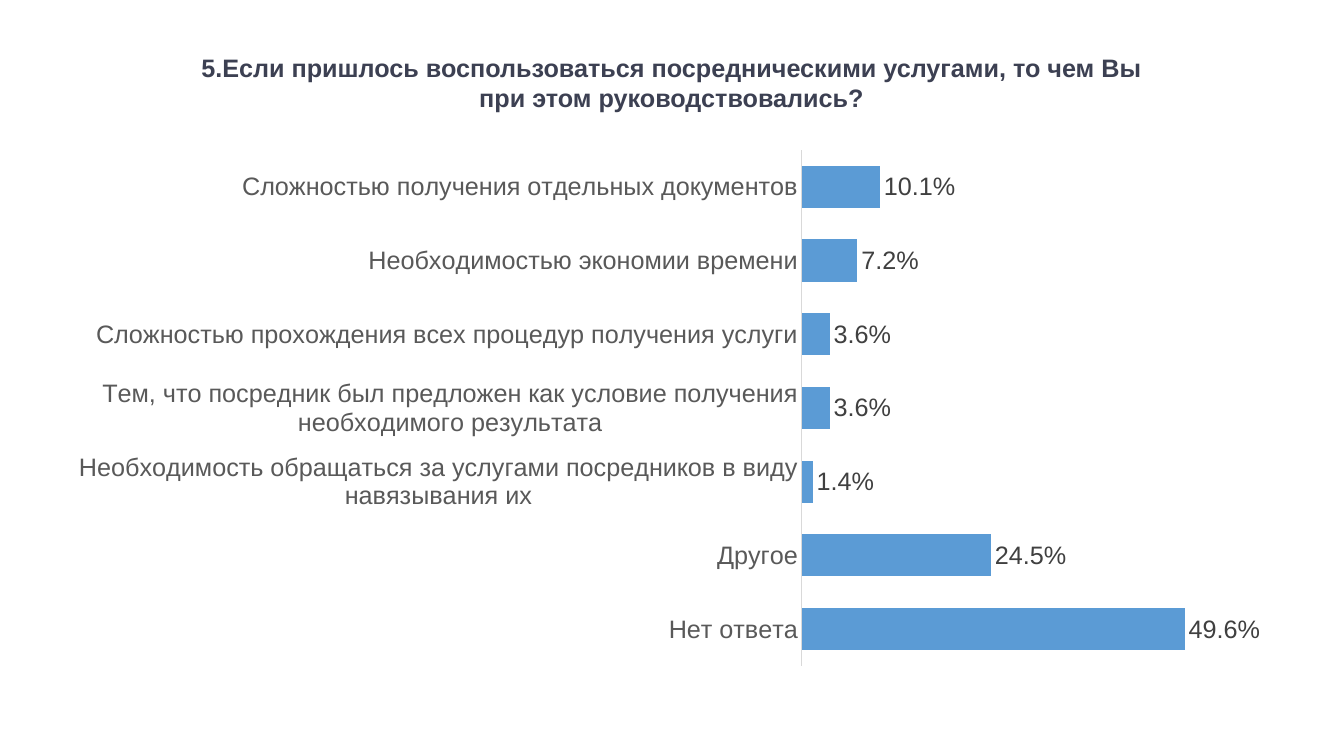
from lxml import etree
from pptx import Presentation
from pptx import util as u
from pptx.chart.data import CategoryChartData
from pptx.dml.color import RGBColor
from pptx.enum import chart as ch, text
from pptx.oxml.ns import qn

PX = 914400 / 100.8
COLORS = {"title": "3C4052", "bar": "5B9BD5", "category": "595959",
          "value": "404040", "axis": "D9D9D9"}


def px(*lengths):
    return [u.Emu(round(n * PX)) for n in lengths]


def style(font, color, bold=False):
    font.name, font.size, font.bold = "Arial", u.Pt(18), bold
    font.color.rgb = RGBColor.from_string(COLORS[color])


prs = Presentation()
prs.slide_width, prs.slide_height = px(1344, 756)
s = prs.slides.add_slide(prs.slide_layouts[6])

# Question
tf = s.shapes.add_textbox(*px(181, 47, 981, 72)).text_frame
tf.word_wrap = True
p = tf.paragraphs[0]
p.text = ("5.Если пришлось воспользоваться посредническими услугами, "
          "то чем Вы при этом руководствовались?")
p.alignment = text.PP_ALIGN.CENTER
style(p.font, "title", bold=True)

# Answers, from the bottom bar to the top one
answers = {
    "Нет ответа": 0.496,
    "Другое": 0.245,
    "Необходимость обращаться за услугами посредников в виду навязывания их": 0.014,
    "Тем, что посредник был предложен как условие получения необходимого результата": 0.036,
    "Сложностью прохождения всех процедур получения услуги": 0.036,
    "Необходимостью экономии времени": 0.072,
    "Сложностью получения отдельных документов": 0.101,
}
data = CategoryChartData(number_format="0.0%")
data.categories = list(answers)
data.add_series("Series 1", list(answers.values()))

# Bar chart
left, top, width, height = 54, 139, 1235, 537
chart = s.shapes.add_chart(ch.XL_CHART_TYPE.BAR_CLUSTERED,
                           *px(left, top, width, height), data).chart
chart.has_legend = chart.has_title = False
chart.font.name, chart.font.size = "Arial", u.Pt(18)
plot = chart.plots[0]
plot.gap_width, plot.vary_by_categories = 75, False
fill = plot.series[0].format.fill
fill.solid()
fill.fore_color.rgb = RGBColor.from_string(COLORS["bar"])

# Value labels
plot.has_data_labels = True
labels = plot.data_labels
labels.show_value = True
labels.number_format, labels.number_format_is_linked = "0.0%", False
labels.position = ch.XL_LABEL_POSITION.OUTSIDE_END
style(labels.font, "value")

# Axes
axis = chart.category_axis
axis.major_tick_mark = ch.XL_TICK_MARK.NONE
axis.format.line.color.rgb = RGBColor.from_string(COLORS["axis"])
axis.format.line.width = u.Pt(0.75)
style(axis.tick_labels.font, "category")
values = chart.value_axis
values.visible = values.has_major_gridlines = False
values.minimum_scale, values.maximum_scale = 0, 0.6

# Inner plot area as fractions of the chart
area = chart._chartSpace.find(".//" + qn("c:plotArea"))
for old in area.findall(qn("c:layout")):
    area.remove(old)
layout = etree.Element(qn("c:layout"))
area.insert(0, layout)
manual = etree.SubElement(layout, qn("c:manualLayout"))
for tag, val in [("layoutTarget", "inner"), ("xMode", "edge"), ("yMode", "edge"),
                 ("x", (802 - left) / width), ("y", (150 - top) / height),
                 ("w", 463 / width), ("h", 516 / height)]:
    etree.SubElement(manual, qn("c:" + tag)).set("val", str(val))

prs.save("out.pptx")
